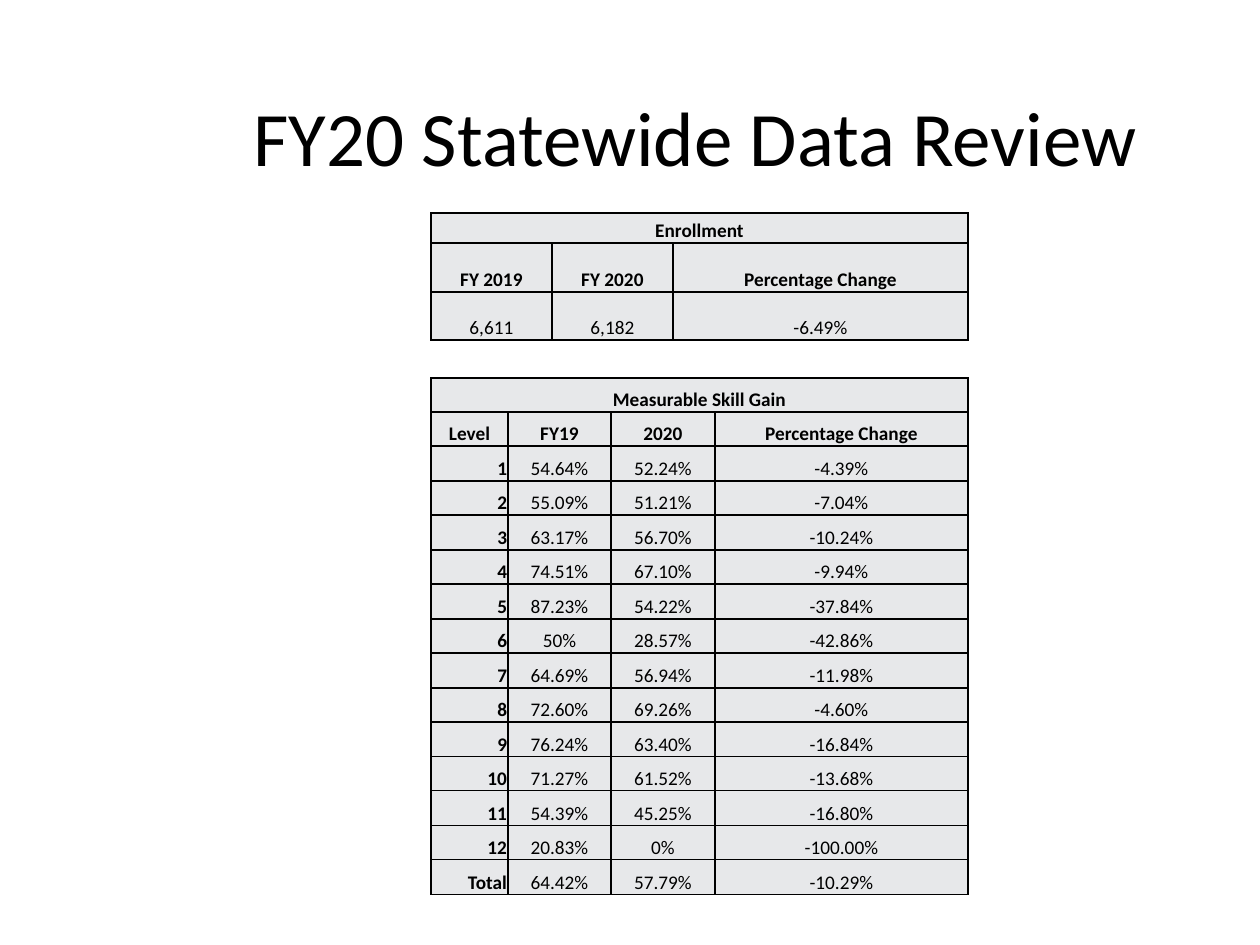
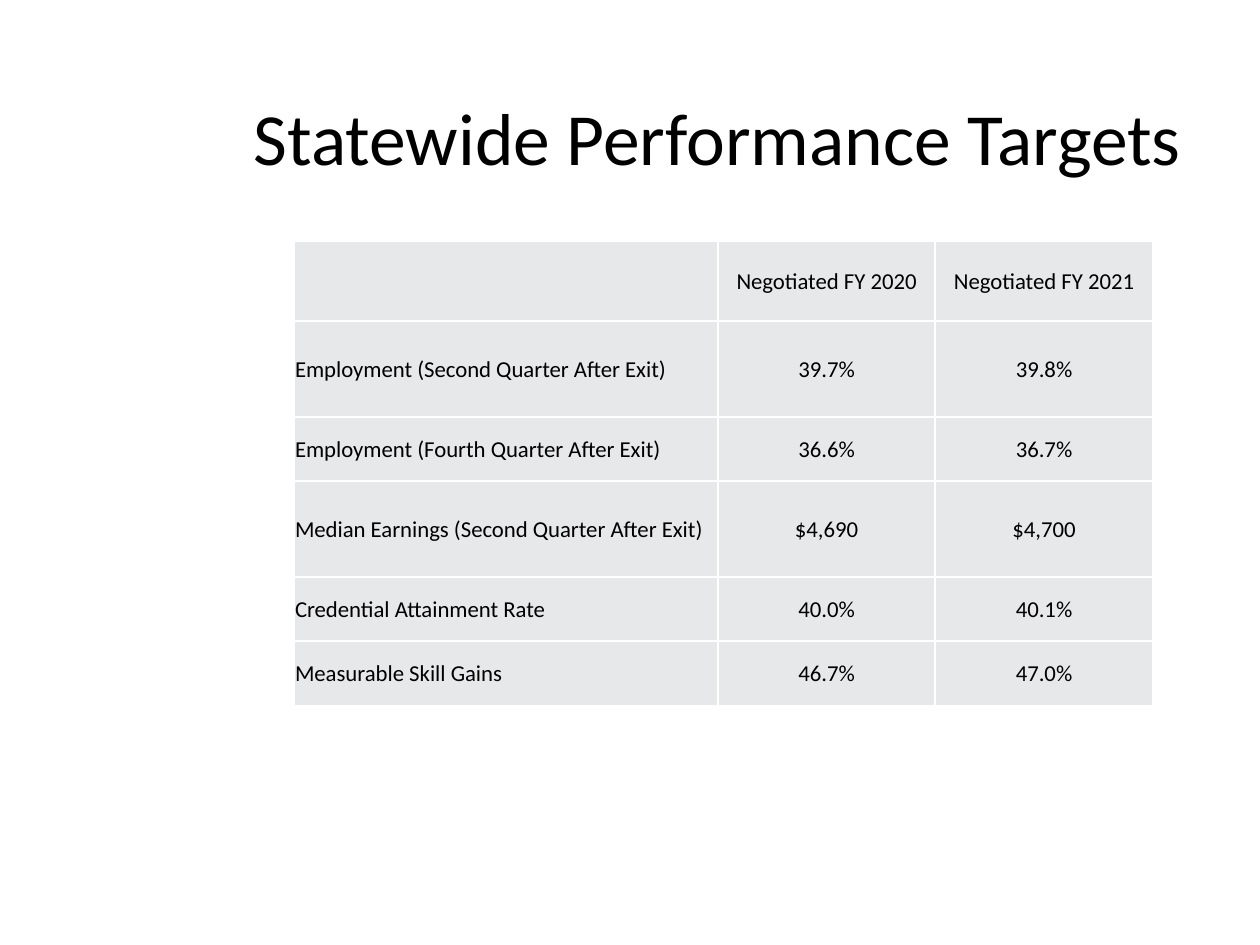
from lxml import etree
from pptx import Presentation
from pptx.dml.color import RGBColor
from pptx.enum.text import MSO_ANCHOR, MSO_AUTO_SIZE, PP_ALIGN
from pptx.oxml.ns import qn
from pptx.util import Pt

EMU_PER_PX = 914400 / 126
FONT = "Calibri"
BLACK = RGBColor(0x00, 0x00, 0x00)
WHITE = RGBColor(0xFF, 0xFF, 0xFF)
CELL_GRAY = RGBColor(0xE7, 0xE8, 0xEA)
LEFT, CENTER, RIGHT = PP_ALIGN.LEFT, PP_ALIGN.CENTER, PP_ALIGN.RIGHT
MIDDLE, BOTTOM = MSO_ANCHOR.MIDDLE, MSO_ANCHOR.BOTTOM
NO_AUTOFIT = MSO_AUTO_SIZE.NONE
TITLE_ONLY = 5


def px(length):
    return round(length * EMU_PER_PX)


def add_data_table(slide, left, top, widths, heights, rows, size, anchor,
                   border, label_align, header_rows=0, bold_labels=False):
    """Draw a gray grid; labels are the first column below the header rows.

    A row with a single entry spans the whole table.
    """
    table = slide.shapes.add_table(
        len(rows), len(widths), px(left), px(top),
        px(sum(widths)), px(sum(heights))).table
    table.first_row = table.horz_banding = False
    for column, width in zip(table.columns, widths):
        column.width = px(width)
    for row, height in zip(table.rows, heights):
        row.height = px(height)

    for r, values in enumerate(rows):
        for c in range(len(widths)):
            cell = table.cell(r, c)
            for side in ("a:lnL", "a:lnR", "a:lnT", "a:lnB"):
                line = etree.SubElement(
                    cell._tc.get_or_add_tcPr(), qn(side), w=str(Pt(1)))
                fill = etree.SubElement(line, qn("a:solidFill"))
                etree.SubElement(fill, qn("a:srgbClr"), val=str(border))
            cell.fill.solid()
            cell.fill.fore_color.rgb = CELL_GRAY
            cell.margin_left = cell.margin_right = cell.margin_top = px(1)
            cell.margin_bottom = 0
            cell.vertical_anchor = anchor

        if len(values) == 1:
            table.cell(r, 0).merge(table.cell(r, len(widths) - 1))
        for c, value in enumerate(values):
            is_label = c == 0 and r >= header_rows
            cell = table.cell(r, c)
            cell.text = value
            paragraph = cell.text_frame.paragraphs[0]
            paragraph.alignment = label_align if is_label else CENTER
            paragraph.font.name = FONT
            paragraph.font.size = Pt(size)
            paragraph.font.bold = r < header_rows or (is_label and bold_labels)
            paragraph.font.color.rgb = BLACK


prs = Presentation()
prs.slide_width, prs.slide_height = px(1260), px(945)

# Slides and titles
slides = []
for heading, size in (("FY20 Statewide Data Review", 44),
                      ("Statewide Performance Targets", 42)):
    slide = prs.slides.add_slide(prs.slide_layouts[TITLE_ONLY])
    title = slide.shapes.title
    title.left, title.top, title.width, title.height = map(px, (241, 50, 964, 183))
    title.text_frame.text = heading
    title.text_frame.auto_size = NO_AUTOFIT
    title.text_frame.vertical_anchor = MIDDLE
    paragraph = title.text_frame.paragraphs[0]
    paragraph.alignment = LEFT
    paragraph.line_spacing = 0.9
    paragraph.font.name = FONT
    paragraph.font.size = Pt(size)
    paragraph.font.color.rgb = BLACK
    slides.append(slide)
review, targets = slides

# Data review: skill gain and enrollment
skill_gain = [
    ("Measurable Skill Gain",),
    ("Level", "FY19", "2020", "Percentage Change"),
    ("1", "54.64%", "52.24%", "-4.39%"),
    ("2", "55.09%", "51.21%", "-7.04%"),
    ("3", "63.17%", "56.70%", "-10.24%"),
    ("4", "74.51%", "67.10%", "-9.94%"),
    ("5", "87.23%", "54.22%", "-37.84%"),
    ("6", "50%", "28.57%", "-42.86%"),
    ("7", "64.69%", "56.94%", "-11.98%"),
    ("8", "72.60%", "69.26%", "-4.60%"),
    ("9", "76.24%", "63.40%", "-16.84%"),
    ("10", "71.27%", "61.52%", "-13.68%"),
    ("11", "54.39%", "45.25%", "-16.80%"),
    ("12", "20.83%", "0%", "-100.00%"),
    ("Total", "64.42%", "57.79%", "-10.29%"),
]
row_edges = [517 * i // len(skill_gain) for i in range(len(skill_gain) + 1)]
skill_heights = [end - start for start, end in zip(row_edges, row_edges[1:])]
add_data_table(review, 431, 378, (77, 103, 104, 253), skill_heights, skill_gain,
               11, BOTTOM, BLACK, RIGHT, header_rows=2, bold_labels=True)

enrollment = [
    ("Enrollment",),
    ("FY 2019", "FY 2020", "Percentage Change"),
    ("6,611", "6,182", "-6.49%"),
]
add_data_table(review, 431, 213, (121, 121, 295), (30, 49, 48), enrollment,
               11, BOTTOM, BLACK, CENTER, header_rows=2)

# Performance targets
negotiated = [
    ("", "Negotiated FY 2020", "Negotiated FY 2021"),
    ("Employment (Second Quarter After Exit)", "39.7%", "39.8%"),
    ("Employment (Fourth Quarter After Exit)", "36.6%", "36.7%"),
    ("Median Earnings (Second Quarter After Exit)", "$4,690", "$4,700"),
    ("Credential Attainment Rate", "40.0%", "40.1%"),
    ("Measurable Skill Gains", "46.7%", "47.0%"),
]
add_data_table(targets, 294, 241, (424, 217, 218), (80, 96, 64, 96, 64, 65),
               negotiated, 13, MIDDLE, WHITE, LEFT)

prs.save("out.pptx")
